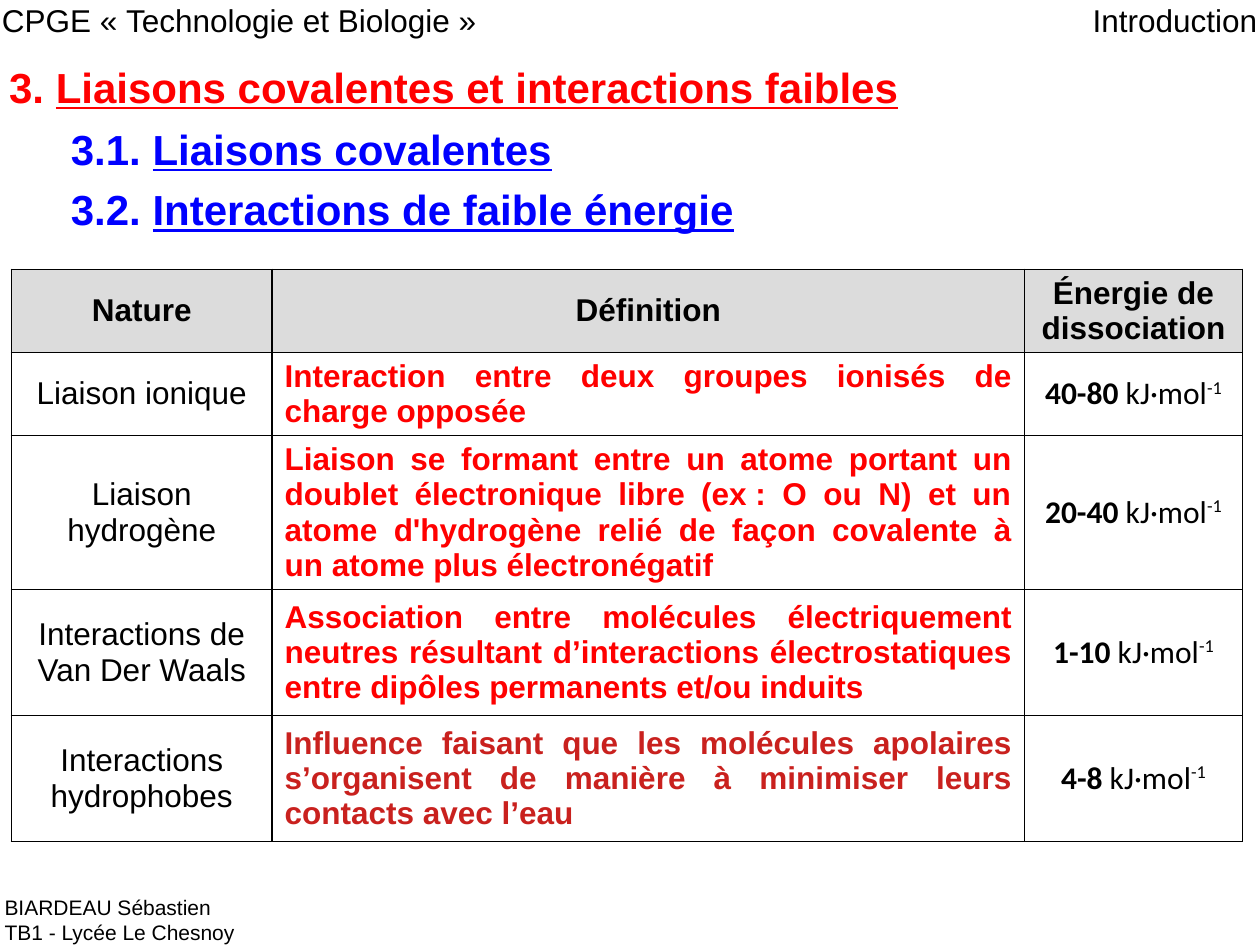
"""Build the slide on covalent bonds and weak interactions."""
from lxml.etree import SubElement
from pptx import Presentation
from pptx.dml.color import RGBColor
from pptx.enum.text import MSO_ANCHOR, MSO_AUTO_SIZE, PP_ALIGN
from pptx.oxml.ns import qn
from pptx.util import Pt

COLORS = {"black": "000000", "red": "FF0000", "dark_red": "C9211E",
          "blue": "0000FF", "header": "DCDCDC"}
LEFT, RIGHT = PP_ALIGN.LEFT, PP_ALIGN.RIGHT
CENTER, JUSTIFY = PP_ALIGN.CENTER, PP_ALIGN.JUSTIFY

TITLE = ("3. ", "Liaisons covalentes et interactions faibles", (-2, 31.5, 722, 34))
SUBTITLES = [
    ("3.1. ", "Liaisons covalentes", (0, 67, 372, 34)),
    ("3.2. ", "Interactions de faible énergie", (0, 101.5, 718, 34)),
]
SUBTITLE_INDENT = 33.4
LABELS = [
    (["CPGE «\u00a0Technologie et Biologie\u00a0»"], (-6, -3, 354, 27), 18, LEFT),
    (["Introduction"], (345.5, -3, 380, 27), 18, RIGHT),
    (["BIARDEAU Sébastien", "TB1 - Lycée Le Chesnoy"], (-4.5, 507.5, 146, 34), 12, LEFT),
]
HEADERS = ["Nature", "Définition", "Énergie de dissociation"]
BONDS = [
    ("Liaison ionique",
     "Interaction entre deux groupes ionisés de charge opposée", "red", "40-80"),
    ("Liaison hydrogène",
     "Liaison se formant entre un atome portant un doublet électronique libre "
     "(ex\u00a0: O ou N) et un atome d'hydrogène relié de façon covalente à un "
     "atome plus électronégatif", "red", "20-40"),
    ("Interactions de Van Der Waals",
     "Association entre molécules électriquement neutres résultant d’interactions "
     "électrostatiques entre dipôles permanents et/ou induits", "red", "1-10"),
    ("Interactions hydrophobes",
     "Influence faisant que les molécules apolaires s’organisent de manière à "
     "minimiser leurs contacts avec l’eau", "dark_red", "4-8"),
]
UNIT, EXPONENT = " kJ·mol", "-1"
TABLE_LEFT, TABLE_TOP = 6.5, 153.8
COL_WIDTHS = [149, 430, 124.5]
ROW_HEIGHTS = [47.4, 47.4, 88, 72, 72]


def rgb(name):
    return RGBColor.from_string(COLORS[name])


def style(p, size=18, color="black", bold=False, align=LEFT, font="Arial"):
    p.alignment = align
    p.font.name, p.font.size, p.font.bold = font, Pt(size), bold
    p.font.color.rgb = rgb(color)


def add_run(p, text):
    r = p.add_run()
    r.text = text
    return r


def set_frame(tf):
    tf.word_wrap = True
    tf.auto_size = MSO_AUTO_SIZE.NONE
    tf.vertical_anchor = MSO_ANCHOR.TOP


def add_box(s, box):
    tf = s.shapes.add_textbox(*map(Pt, box)).text_frame
    set_frame(tf)
    return tf


def write_heading(p, number, text, color):
    style(p, 24, color, True)
    add_run(p, number)
    add_run(p, text).font.underline = True


def set_borders(cell):
    tcPr = cell._tc.get_or_add_tcPr()
    for side in ("lnL", "lnR", "lnT", "lnB"):
        ln = SubElement(tcPr, qn(f"a:{side}"), w=str(Pt(0.85)))
        fill = SubElement(ln, qn("a:solidFill"))
        SubElement(fill, qn("a:srgbClr"), val=COLORS["black"])


def write_cell(cell, text, **kw):
    p = cell.text_frame.paragraphs[0]
    add_run(p, text)
    style(p, **kw)
    return p


def add_bond_table(s):
    table = s.shapes.add_table(
        len(ROW_HEIGHTS), len(COL_WIDTHS), Pt(TABLE_LEFT), Pt(TABLE_TOP),
        Pt(sum(COL_WIDTHS)), Pt(sum(ROW_HEIGHTS))).table
    table.first_row = table.horz_banding = False
    for col, width in zip(table.columns, COL_WIDTHS):
        col.width = Pt(width)
    for row, height in zip(table.rows, ROW_HEIGHTS):
        row.height = Pt(height)
    for cell in table.iter_cells():
        cell.vertical_anchor = MSO_ANCHOR.MIDDLE
        cell.margin_left = cell.margin_right = Pt(7.2)
        cell.margin_top = cell.margin_bottom = Pt(3.6)
        set_borders(cell)
        cell.fill.background()

    for cell, text in zip(table.rows[0].cells, HEADERS):
        cell.fill.solid()
        cell.fill.fore_color.rgb = rgb("header")
        write_cell(cell, text, bold=True, align=CENTER)
    for i, (nature, definition, color, energy) in enumerate(BONDS, 1):
        write_cell(table.cell(i, 0), nature, align=CENTER)
        write_cell(table.cell(i, 1), definition, color=color, bold=True, align=JUSTIFY)
        p = write_cell(table.cell(i, 2), energy, align=CENTER, font="Calibri")
        p.runs[0].font.bold = True
        add_run(p, UNIT)
        add_run(p, EXPONENT)._r.get_or_add_rPr().set("baseline", "33000")


def main():
    prs = Presentation()
    prs.slide_width, prs.slide_height = Pt(720), Pt(540)
    s = prs.slides.add_slide(prs.slide_layouts[5])

    number, text, box = TITLE
    title = s.shapes.title
    title.left, title.top, title.width, title.height = map(Pt, box)
    set_frame(title.text_frame)
    write_heading(title.text_frame.paragraphs[0], number, text, "red")

    for number, text, box in SUBTITLES:
        p = add_box(s, box).paragraphs[0]
        write_heading(p, number, text, "blue")
        p._p.get_or_add_pPr().set("marL", str(Pt(SUBTITLE_INDENT)))

    for lines, box, size, align in LABELS:
        tf = add_box(s, box)
        tf.text = "\n".join(lines)
        for p in tf.paragraphs:
            style(p, size, align=align)

    add_bond_table(s)
    prs.save("out.pptx")


if __name__ == "__main__":
    main()
